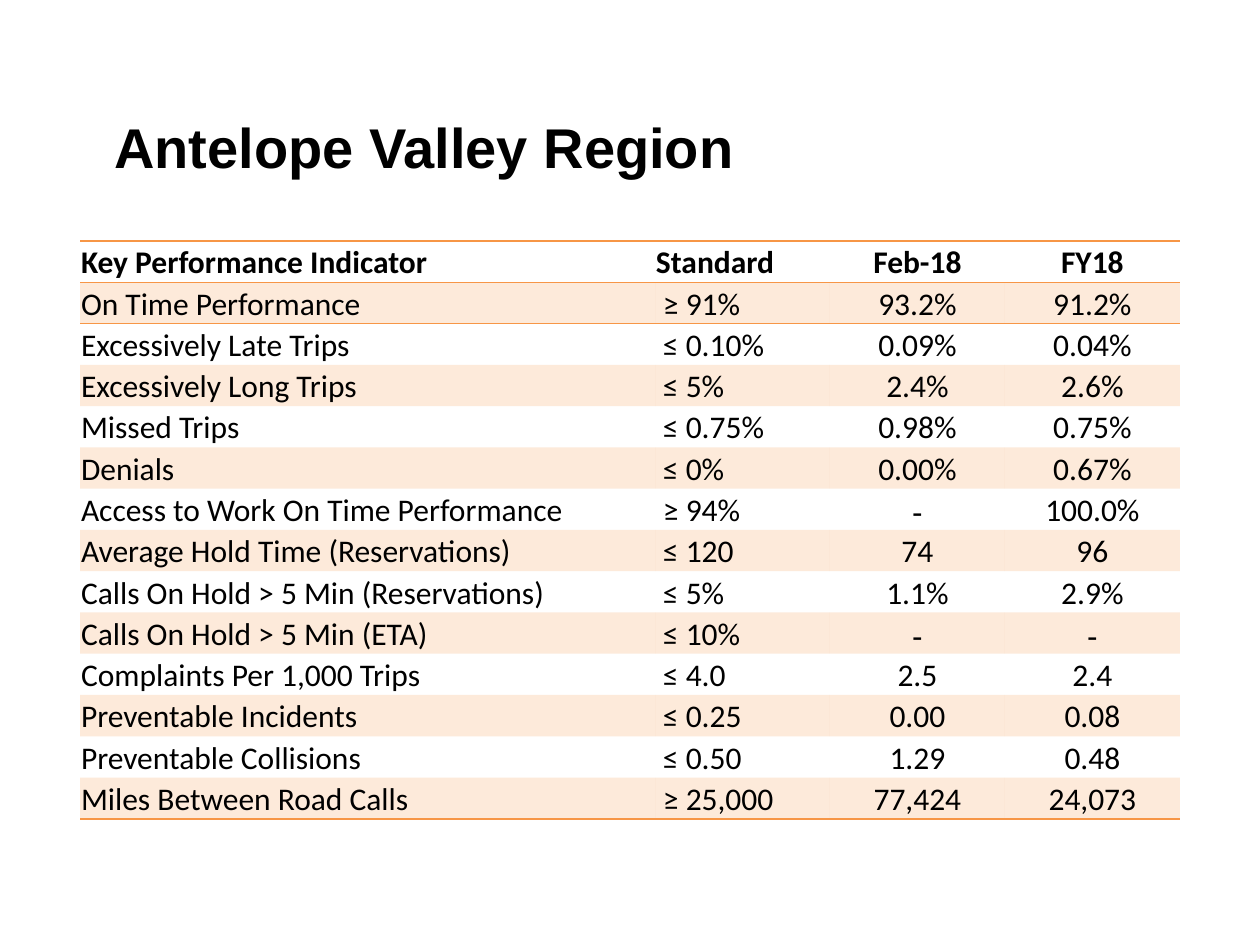
import pptx
import pptx.dml.color
import pptx.enum.text
import pptx.oxml
import pptx.util
from lxml import etree

PX = 914400 / 126
NS = 'xmlns:a="http://schemas.openxmlformats.org/drawingml/2006/main"'
NO_STYLE = "{2D5ABB26-0587-4C30-8999-92F81FD0307C}"
ORANGE = "F79646"
ALIGN = pptx.enum.text.PP_ALIGN
ANCHOR = pptx.enum.text.MSO_ANCHOR


def px(n):
    return pptx.util.Emu(round(n * PX))


def rgb(value):
    return pptx.dml.color.RGBColor.from_string(value)


prs = pptx.Presentation()
prs.slide_width, prs.slide_height = px(1260), px(945)
s = prs.slides.add_slide(prs.slide_layouts[6])

# Title
sp = s.shapes.add_textbox(px(102), px(106), px(1057), px(81))
tf = sp.text_frame
tf.word_wrap = True
tf.vertical_anchor = ANCHOR.MIDDLE
r = tf.paragraphs[0].add_run()
r.text = "Antelope Valley Region"
for name, value in {"name": "Arial", "size": pptx.util.Pt(32), "bold": True}.items():
    setattr(r.font, name, value)
r.font.color.rgb = rgb("000000")

# Indicator data
rows = [
    ("Key Performance Indicator", "Standard", "Feb-18", "FY18"),
    ("On Time Performance", "≥ 91%", "93.2%", "91.2%"),
    ("Excessively Late Trips", "≤ 0.10%", "0.09%", "0.04%"),
    ("Excessively Long Trips", "≤ 5%", "2.4%", "2.6%"),
    ("Missed Trips", "≤ 0.75%", "0.98%", "0.75%"),
    ("Denials", "≤ 0%", "0.00%", "0.67%"),
    ("Access to Work On Time Performance", "≥ 94%", "-", "100.0%"),
    ("Average Hold Time (Reservations)", "≤ 120", "74", "96"),
    ("Calls On Hold > 5 Min (Reservations)", "≤ 5%", "1.1%", "2.9%"),
    ("Calls On Hold > 5 Min (ETA)", "≤ 10%", "-", "-"),
    ("Complaints Per 1,000 Trips", "≤ 4.0", "2.5", "2.4"),
    ("Preventable Incidents", "≤ 0.25", "0.00", "0.08"),
    ("Preventable Collisions", "≤ 0.50", "1.29", "0.48"),
    ("Miles Between Road Calls", "≥ 25,000", "77,424", "24,073"),
]
widths = [575, 175, 175, 175]
table_height = 578
last = len(rows) - 1

# Table frame
tbl = s.shapes.add_table(len(rows), len(widths), px(80), px(241),
                         px(sum(widths)), px(table_height)).table
tbl.first_row = tbl.horz_banding = False
tbl._tbl.tblPr.find("{*}tableStyleId").text = NO_STYLE
for col, width in zip(tbl.columns, widths):
    col.width = px(width)
for row in tbl.rows:
    row.height = px(table_height / len(rows))

# Cells
for i, values in enumerate(rows):
    edges = {0: ("lnT", "lnB"), 1: ("lnT",), last: ("lnB",)}.get(i, ())
    for j, text in enumerate(values):
        cell = tbl.cell(i, j)
        fmt = {
            "margin_left": px(8 if i and j == 1 else 1),
            "margin_right": px(1),
            "margin_top": px(1),
            "margin_bottom": px(0),
            "vertical_anchor": ANCHOR.BOTTOM,
        }
        for name, value in fmt.items():
            setattr(cell, name, value)

        # Rules above and below the header, and under the last row
        for edge in edges:
            cell._tc.get_or_add_tcPr().append(pptx.oxml.parse_xml(
                f'<a:{edge} {NS} w="12700"><a:solidFill>'
                f'<a:srgbClr val="{ORANGE}"/></a:solidFill></a:{edge}>'))

        # Translucent bands on odd rows
        if i % 2:
            cell.fill.solid()
            cell.fill.fore_color.rgb = rgb(ORANGE)
            clr = cell._tc.tcPr.find("{*}solidFill/{*}srgbClr")
            etree.SubElement(clr, clr.tag.replace("srgbClr", "alpha"), val="20000")
        else:
            cell.fill.background()

        p = cell.text_frame.paragraphs[0]
        p.alignment = ALIGN.CENTER if j > 1 else ALIGN.LEFT
        r = p.add_run()
        r.text = text
        font = {
            "name": "Arial" if text == "-" else "Calibri",
            "size": pptx.util.Pt(18),
            "bold": i == 0,
        }
        for name, value in font.items():
            setattr(r.font, name, value)
        r.font.color.rgb = rgb("000000")

prs.save("out.pptx")
